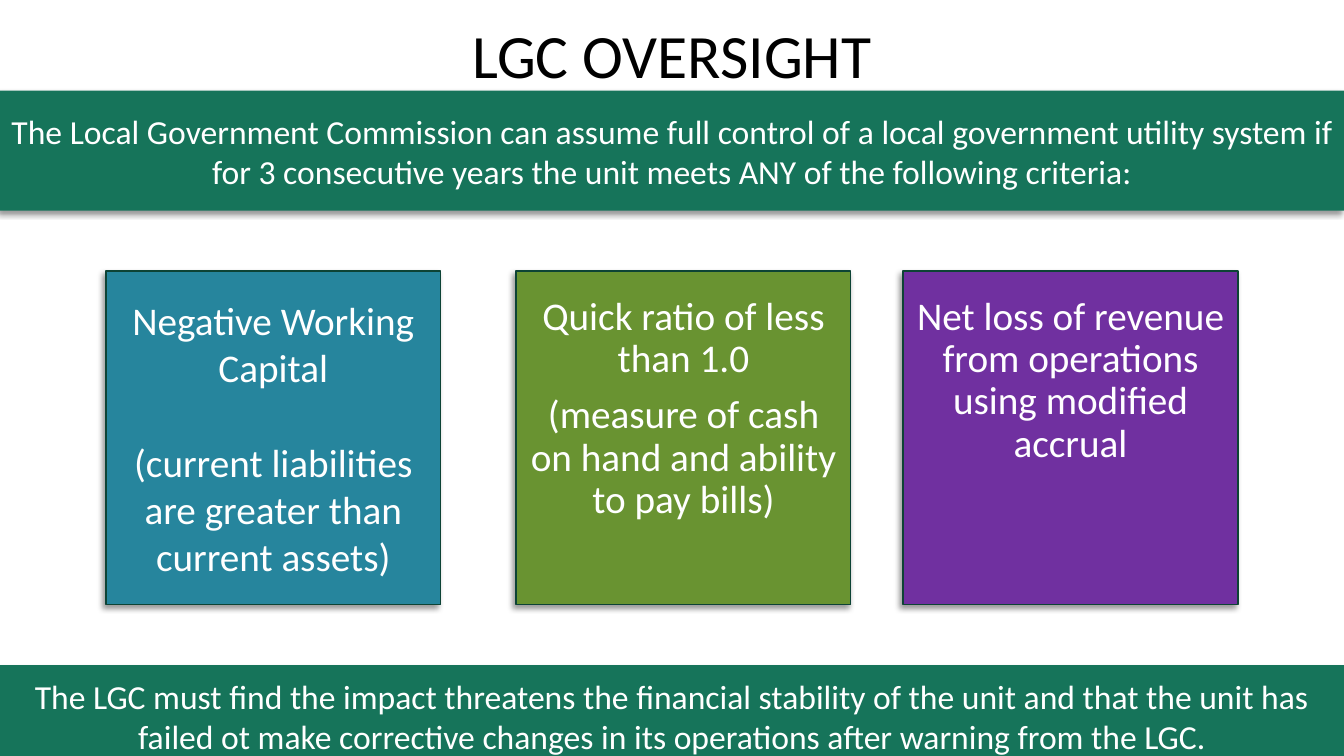
from lxml.etree import SubElement
from pptx import Presentation
from pptx.dml.color import RGBColor
from pptx.enum.shapes import MSO_SHAPE as Preset
from pptx.enum.text import MSO_ANCHOR as Anchor, MSO_AUTO_SIZE as AutoSize, PP_ALIGN as Align
from pptx.oxml.ns import qn
from pptx.util import Inches, Pt

BLACK = RGBColor(0x00, 0x00, 0x00)
WHITE = RGBColor(0xFF, 0xFF, 0xFF)
GREEN = RGBColor(0x16, 0x74, 0x5A)
DARK_GREEN = RGBColor(0x0D, 0x43, 0x35)
TEAL = RGBColor(0x26, 0x85, 0x9D)
OLIVE = RGBColor(0x69, 0x93, 0x31)
PURPLE = RGBColor(0x70, 0x30, 0xA0)


class OversightSlide:
    """Places elements by percent of the slide's width and height."""

    font = "Calibri"

    def __init__(self, deck):
        self.width, self.height = deck.slide_width, deck.slide_height
        self.slide = deck.slides.add_slide(deck.slide_layouts[5])

    def area(self, left, top, width, height):
        return (int(self.width * left / 100), int(self.height * top / 100),
                int(self.width * width / 100), int(self.height * height / 100))

    def set_text(self, frame, paragraphs, size, color, anchor=Anchor.MIDDLE, spacing=1.0, gap=0):
        frame.word_wrap = True
        frame.auto_size = AutoSize.NONE
        frame.vertical_anchor = anchor
        for index, wording in enumerate(paragraphs):
            paragraph = frame.add_paragraph() if index else frame.paragraphs[0]
            paragraph.text = wording
            paragraph.alignment = Align.CENTER
            paragraph.line_spacing = spacing
            paragraph.space_before = Pt(gap if index else 0)
            paragraph.font.name = self.font
            paragraph.font.size = Pt(size)
            paragraph.font.color.rgb = color

    def title(self, wording, *place):
        heading = self.slide.shapes.title
        heading.left, heading.top, heading.width, heading.height = self.area(*place)
        self.set_text(heading.text_frame, [wording], 44, BLACK, spacing=0.9)

    def panel(self, fill, *place):
        panel = self.slide.shapes.add_shape(Preset.RECTANGLE, *self.area(*place))
        panel.fill.solid()
        panel.fill.fore_color.rgb = fill
        panel.line.fill.background()
        self.cast_shadow(panel)
        return panel

    def cast_shadow(self, panel):
        panel.shadow.inherit = False
        effects = panel.element.spPr.find(qn("a:effectLst"))
        shadow = SubElement(effects, qn("a:outerShdw"), blurRad=str(Pt(4)), dist=str(Pt(3)),
                            dir=str(135 * 60000), algn="tr", rotWithShape="0")
        tint = SubElement(shadow, qn("a:srgbClr"), val=str(BLACK))
        SubElement(tint, qn("a:alpha"), val="40000")

    def band(self, wording, top, height):
        band = self.panel(GREEN, 0, top, 100, height)
        self.set_text(band.text_frame, [wording], 24, WHITE)

    def criterion(self, paragraphs, left, fill, spacing, gap):
        card = self.panel(fill, left, 35.87, 24.9, 44.13)
        card.line.color.rgb = DARK_GREEN
        card.line.width = Pt(1)
        card.text_frame.margin_top = Inches(0.25)
        self.set_text(card.text_frame, paragraphs, 28, WHITE, Anchor.TOP, spacing, gap)


def main():
    deck = Presentation()
    deck.slide_width, deck.slide_height = Inches(13.33), Inches(7.5)
    oversight = OversightSlide(deck)

    # Title and opening rule
    oversight.title("LGC OVERSIGHT", 6.9, -1.87, 86.25, 19.33)
    oversight.band("The Local Government Commission can assume full control of a local government "
                   "utility system if for 3 consecutive years the unit meets ANY of the "
                   "following criteria:", 12, 15.87)

    # Criteria: wording, left edge, fill, line spacing, paragraph gap
    criteria = [
        (["Negative Working Capital",
          "(current liabilities are greater than current assets)"], 7.88, TEAL, 1.0, 34),
        (["Quick ratio of less than 1.0",
          "(measure of cash on hand and ability to pay bills)"], 38.4, OLIVE, 0.9, 10),
        (["Net loss of revenue from operations using modified accrual"], 67.2, PURPLE, 0.9, 10),
    ]
    for criterion in criteria:
        oversight.criterion(*criterion)

    # Closing condition
    oversight.band("The LGC must find the impact threatens the financial stability of the unit "
                   "and that the unit has failed ot make corrective changes in its operations "
                   "after warning from the LGC.", 88, 13.47)

    deck.save("out.pptx")


if __name__ == "__main__":
    main()
